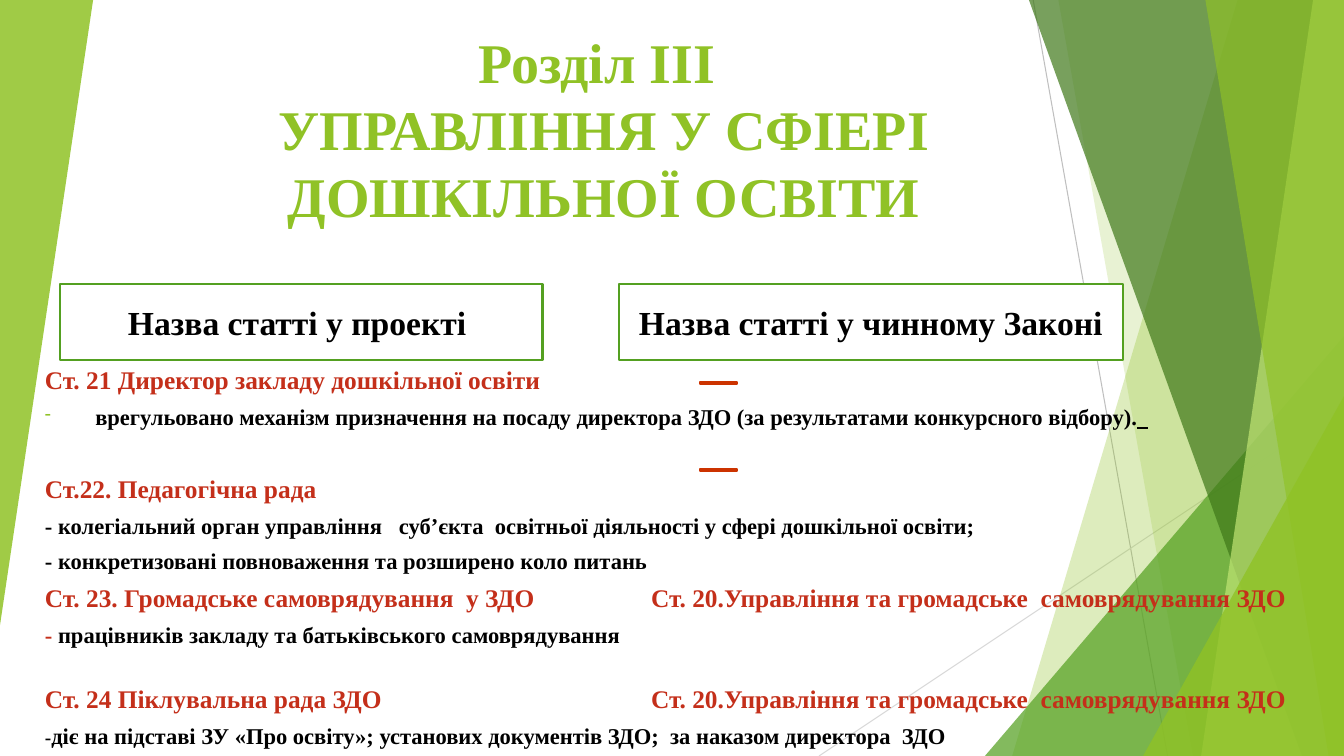
from lxml import etree
from pptx import Presentation
from pptx import util as u
from pptx.dml.color import RGBColor
from pptx.enum import shapes, text
from pptx.oxml import ns

WIDTH, HEIGHT = 960, 540
FONT = "Times New Roman"

GREEN = RGBColor(0x90, 0xC2, 0x26)
MID_GREEN = RGBColor(0x54, 0xA0, 0x21)
DARK_GREEN = RGBColor(0x3F, 0x78, 0x19)
PALE_GREEN = RGBColor(0xC0, 0xE4, 0x74)
GREY = RGBColor(0xBF, 0xBF, 0xBF)
LIGHT_GREY = RGBColor(0xD9, 0xD9, 0xD9)
RED = RGBColor(0xC4, 0x2F, 0x1A)
ORANGE = RGBColor(0xCC, 0x33, 0x00)
BLACK = RGBColor(0, 0, 0)
WHITE = RGBColor(0xFF, 0xFF, 0xFF)

HEADING, DETAIL, SMALL = 18.1, 16.1, 13.8
GAP = 6
COLUMN = 433
RULE_START, RULE_END = 441, 594
CURRENT_ARTICLE = "Ст. 20.Управління та громадське  самоврядування ЗДО"


def add_xml(parent, tag, **attributes):
    values = {name: str(value) for name, value in attributes.items()}
    return etree.SubElement(parent, ns.qn(tag), values)


def style(shape, fill, opacity=100, line=None):
    shape.shadow.inherit = False
    shape.fill.solid()
    shape.fill.fore_color.rgb = fill
    if opacity < 100:
        color = shape.fill._xPr.find(ns.qn("a:solidFill"))[0]
        add_xml(color, "a:alpha", val=opacity * 1000)
    if line is None:
        shape.line.fill.background()
    else:
        shape.line.color.rgb = line
        shape.line.width = u.Pt(1.5)


def add_thin_line(slide, start, end, color):
    line = slide.shapes.add_connector(
        shapes.MSO_CONNECTOR.STRAIGHT, *map(u.Pt, start + end))
    line.line.color.rgb = color
    line.line.width = u.Pt(0.75)
    add_xml(line._element.spPr, "a:effectLst")


def add_band(slide, top, bottom, color, opacity):
    """Fill from a slanted left edge to the right edge of the slide."""
    builder = slide.shapes.build_freeform(top, 0, scale=u.Pt(1))
    builder.add_line_segments([(WIDTH, 0), (WIDTH, HEIGHT), (bottom, HEIGHT)])
    style(builder.convert_to_shape(), color, opacity)


def add_shape(slide, kind, box, fill, opacity=100, line=None):
    shape = slide.shapes.add_shape(kind, *map(u.Pt, box))
    style(shape, fill, opacity, line)
    return shape


def add_corner(slide, box, color, opacity, rotation=0):
    """Add a right triangle with its apex at the right."""
    shape = add_shape(
        slide, shapes.MSO_SHAPE.ISOSCELES_TRIANGLE, box, color, opacity)
    shape.adjustments[0] = 1
    shape.rotation = rotation


def add_run(paragraph, words, size, color, underline=None):
    run = paragraph.add_run()
    run.text = words
    font = run.font
    font.name, font.size, font.bold = FONT, u.Pt(size), True
    font.color.rgb = color
    font.underline = underline


def add_text_box(slide, box):
    frame = slide.shapes.add_textbox(*map(u.Pt, box)).text_frame
    frame.word_wrap = True
    return frame


def add_header(slide, kind, box, words):
    shape = add_shape(slide, kind, box, WHITE, line=MID_GREEN)
    frame = shape.text_frame
    frame.word_wrap = True
    frame.vertical_anchor = text.MSO_ANCHOR.MIDDLE
    paragraph = frame.paragraphs[0]
    paragraph.alignment = text.PP_ALIGN.CENTER
    add_run(paragraph, words, 24, BLACK)


def add_title(slide):
    frame = add_text_box(slide, (83.5, 29, 695.5, 138))
    frame.vertical_anchor = text.MSO_ANCHOR.BOTTOM
    paragraph = frame.paragraphs[0]
    paragraph.alignment = text.PP_ALIGN.CENTER
    add_run(paragraph, "Розділ ІІІ ", 40, GREEN)
    paragraph.add_line_break()
    add_run(paragraph, "УПРАВЛІННЯ У СФІЕРІ ДОШКІЛЬНОЇ ОСВІТИ", 40, GREEN)


def add_dash_bullet(paragraph):
    properties = paragraph._p.get_or_add_pPr()
    properties.set("marL", str(u.Pt(36)))
    properties.set("indent", str(-u.Pt(36)))
    color = add_xml(properties, "a:buClr")
    add_xml(color, "a:srgbClr", val=GREEN)
    add_xml(properties, "a:buSzPct", val=80000)
    add_xml(properties, "a:buChar", char="-")


def add_tab_stops(paragraph, stops):
    tabs = add_xml(paragraph._p.get_or_add_pPr(), "a:tabLst")
    for stop in stops:
        add_xml(tabs, "a:tab", pos=u.Pt(stop), algn="l")


def add_articles(slide):
    # Each entry: space before, bullet, tab stops, runs
    entries = [
        (GAP, False, (RULE_START, RULE_END), [
            ("Ст. 21 Директор закладу дошкільної освіти\t", HEADING, RED),
            ("\t", HEADING, RED, True)]),
        (GAP, True, (), [
            ("врегульовано механізм призначення на посаду директора ЗДО "
             "(за результатами конкурсного відбору).", DETAIL, BLACK),
            ("  ", DETAIL, BLACK, True)]),
        (30.5, False, (), [("Ст.22. Педагогічна рада", HEADING, RED)]),
        (GAP, False, (), [
            ("- колегіальний орган управління   суб’єкта  освітньої "
             "діяльності у сфері дошкільної освіти;", DETAIL, BLACK)]),
        (GAP, False, (), [
            ("- конкретизовані повноваження та розширено коло питань",
             DETAIL, BLACK)]),
        (GAP, False, (COLUMN,), [
            ("Ст. 23. Громадське самоврядування  у ЗДО\t" + CURRENT_ARTICLE,
             HEADING, RED)]),
        (GAP, False, (), [
            ("- ", DETAIL, RED),
            ("працівників закладу та батьківського самоврядування",
             DETAIL, BLACK)]),
        (25, False, (COLUMN,), [
            ("Ст. 24 Піклувальна рада ЗДО\t" + CURRENT_ARTICLE,
             HEADING, RED)]),
        (GAP, False, (), [
            ("-", SMALL, BLACK),
            ("діє на підставі ЗУ «Про освіту»; установих документів ЗДО;  "
             "за наказом директора  ЗДО", DETAIL, BLACK)]),
    ]
    frame = add_text_box(slide, (25, 256.5, 929, 273.5))
    for index, (space, bullet, stops, runs) in enumerate(entries):
        paragraph = frame.add_paragraph() if index else frame.paragraphs[0]
        paragraph.space_before = u.Pt(space)
        if bullet:
            add_dash_bullet(paragraph)
        if stops:
            add_tab_stops(paragraph, stops)
        for run in runs:
            add_run(paragraph, *run)


def add_background(slide):
    add_thin_line(slide, (738, 0), (834, HEIGHT), GREY)
    add_thin_line(slide, (WIDTH, 290), (585, HEIGHT), LIGHT_GREY)
    add_band(slide, 884, 723, GREEN, 30)
    add_band(slide, 756, 852, GREEN, 20)
    add_corner(slide, (703.5, 240, 256.5, 300), MID_GREEN, 72)
    add_band(slide, 735, 929.5, DARK_GREEN, 70)
    add_band(slide, 938, 858, PALE_GREEN, 70)
    add_band(slide, 861, 949, GREEN, 65)
    add_corner(slide, (816.5, 283, 143.5, 257), GREEN, 80)
    add_corner(slide, (0, 0, 66.5, 446.5), GREEN, 85, rotation=180)


def main():
    presentation = Presentation()
    presentation.slide_width = u.Pt(WIDTH)
    presentation.slide_height = u.Pt(HEIGHT)
    slide = presentation.slides.add_slide(presentation.slide_layouts[6])
    add_background(slide)
    add_articles(slide)
    add_title(slide)
    add_header(slide, shapes.MSO_SHAPE.FLOWCHART_PROCESS,
               (43, 203, 344.5, 54), "Назва статті у проекті ")
    add_header(slide, shapes.MSO_SHAPE.RECTANGLE,
               (442, 203, 360, 54), "Назва статті у чинному Законі")
    for top in (332.5, 270.5):
        add_shape(slide, shapes.MSO_SHAPE.MATH_MINUS,
                  (495.5, top, 36, 6.5), ORANGE, line=ORANGE)
    presentation.save("out.pptx")


if __name__ == "__main__":
    main()
